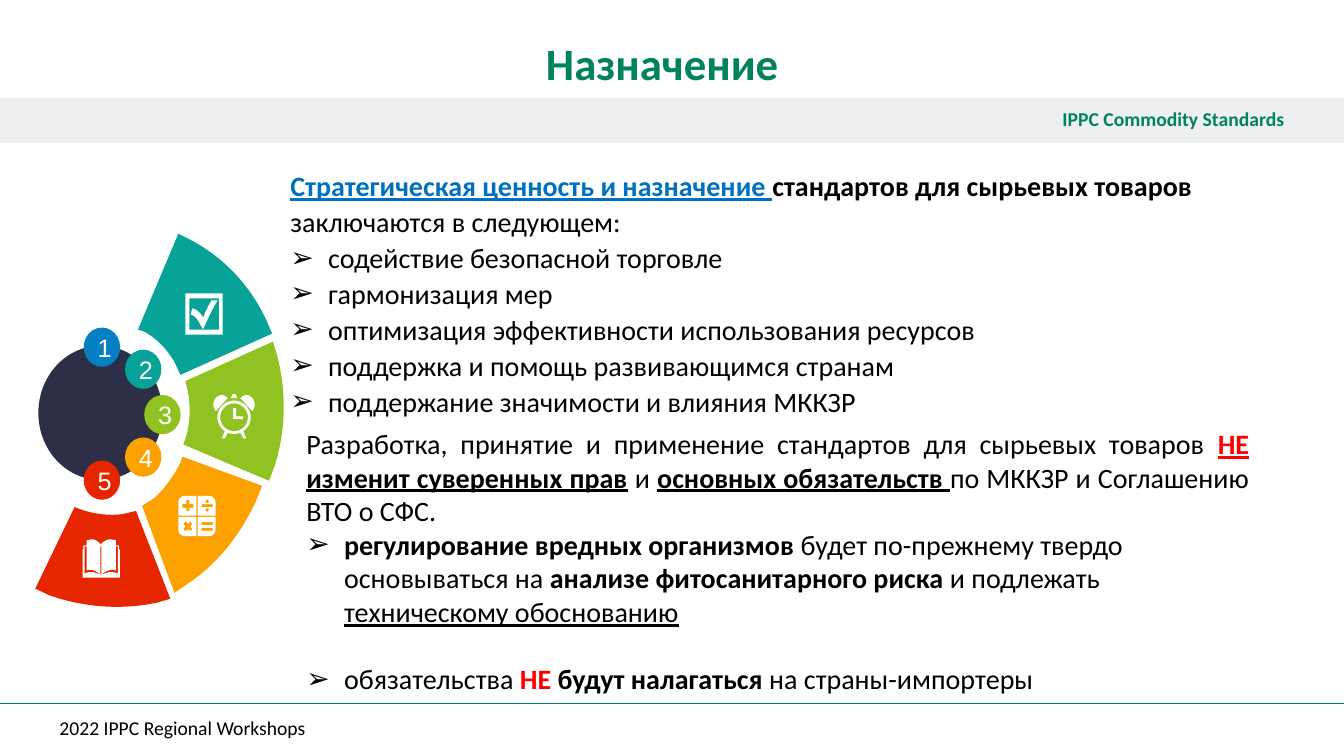
from dataclasses import dataclass

from lxml.etree import SubElement
from pptx import Presentation
from pptx.dml.color import RGBColor
from pptx.enum.shapes import MSO_CONNECTOR, MSO_SHAPE
from pptx.enum.text import MSO_ANCHOR, MSO_AUTO_SIZE, PP_ALIGN
from pptx.oxml.ns import qn
from pptx.util import Pt


@dataclass(frozen=True)
class Theme:
    green: str = "00825F"
    band: str = "D8D9DC"
    black: str = "000000"
    white: str = "FFFFFF"
    red: str = "FF0000"
    link: str = "0070C0"
    navy: str = "2C2F45"
    blue: str = "0680C3"
    teal: str = "07A398"
    lime: str = "90C221"
    orange: str = "FBA200"
    scarlet: str = "E62601"
    font: str = "Calibri"
    badge_font: str = "Arial"
    title: int = 32
    body: int = 20
    badge: int = 18
    small: int = 14


T = Theme()


@dataclass(frozen=True)
class Run:
    text: str
    color: str = T.black
    bold: bool = False
    underline: bool = False
    size: int = T.body
    font: str = T.font


@dataclass(frozen=True)
class Para:
    runs: list[Run]
    bullet: bool = False
    align: PP_ALIGN = PP_ALIGN.LEFT
    spacing: float = 1.0
    before: float = 0


@dataclass(frozen=True)
class Outline:
    """A filled outline: M, L, C and Z commands in points from (x, y)."""
    color: str
    d: str
    x: float = 0
    y: float = 0


@dataclass(frozen=True)
class Badge:
    number: str
    color: str
    x: float
    y: float


def write(sp, paras: list[Para], insets=(7.2, 3.6, 7.2, 3.6), anchor=MSO_ANCHOR.TOP,
          fit=MSO_AUTO_SIZE.NONE) -> None:
    tf = sp.text_frame
    tf.word_wrap, tf.auto_size, tf.vertical_anchor = True, fit, anchor
    tf.margin_left, tf.margin_top, tf.margin_right, tf.margin_bottom = map(Pt, insets)
    for i, para in enumerate(paras):
        p = tf.add_paragraph() if i else tf.paragraphs[0]
        if para.bullet:
            ppr = p._p.get_or_add_pPr()
            ppr.set("marL", str(Pt(27)))
            ppr.set("indent", str(-Pt(27)))
            SubElement(ppr, qn("a:buFont")).set("typeface", T.badge_font)
            SubElement(ppr, qn("a:buChar")).set("char", "➢")
        p.alignment, p.line_spacing = para.align, para.spacing
        if para.before:
            p.space_before = Pt(para.before)
        for run in para.runs:
            r = p.add_run()
            r.text = run.text
            f = r.font
            f.name, f.size, f.bold, f.underline = run.font, Pt(run.size), run.bold, run.underline
            f.color.rgb = RGBColor.from_string(run.color)


def paint(sp, color: str) -> None:
    sp.shadow.inherit = False
    sp.fill.solid()
    sp.fill.fore_color.rgb = RGBColor.from_string(color)
    sp.line.fill.background()


def add_shape(s, kind: MSO_SHAPE, box: tuple, color: str):
    sp = s.shapes.add_shape(kind, *map(Pt, box))
    paint(sp, color)
    return sp


def add_text(s, box: tuple, paras: list[Para], **style) -> None:
    write(s.shapes.add_textbox(*map(Pt, box)), paras, **style)


def rect(x1: float, y1: float, x2: float, y2: float) -> str:
    return f"M {x1} {y1} L {x2} {y1} L {x2} {y2} L {x1} {y2} Z "


def circle(x: float, y: float, r: float) -> str:
    k = 0.55 * r
    return (f"M {x + r} {y} C {x + r} {y + k} {x + k} {y + r} {x} {y + r} "
            f"C {x - k} {y + r} {x - r} {y + k} {x - r} {y} "
            f"C {x - r} {y - k} {x - k} {y - r} {x} {y - r} "
            f"C {x + k} {y - r} {x + r} {y - k} {x + r} {y} Z ")


def contours(d: str, steps: int = 12) -> list[list[tuple[float, float]]]:
    """Turn path commands into point lists, sampling each cubic curve."""
    result, words = [], iter(d.split())
    for word in words:
        if word == "Z":
            continue
        values = [float(next(words)) for _ in range(6 if word == "C" else 2)]
        ends = list(zip(values[::2], values[1::2]))
        if word == "M":
            result.append(ends)
        elif word == "L":
            result[-1] += ends
        else:
            curve = [result[-1][-1], *ends]
            for t in (i / steps for i in range(1, steps + 1)):
                weights = ((1 - t) ** 3, 3 * t * (1 - t) ** 2, 3 * t * t * (1 - t), t ** 3)
                result[-1].append(tuple(sum(w * pt[axis] for w, pt in zip(weights, curve))
                                        for axis in (0, 1)))
    return result


def add_outline(s, o: Outline) -> None:
    fb = None
    for points in contours(o.d):
        first, *rest = [(Pt(o.x + x), Pt(o.y + y)) for x, y in points]
        if fb is None:
            fb = s.shapes.build_freeform(*first, scale=1.0)
        else:
            fb.move_to(*first)
        fb.add_line_segments(rest, close=True)
    paint(fb.convert_to_shape(), o.color)


WEDGES = [
    Outline(T.lime, "M 195 244 L 198 254 C 204.5 278.5 204.5 306 196.5 332 L 192.2 343.4 L 131 317.5 "
            "L 132.5 313.2 C 136 302.4 136 291.6 134.6 281.5 L 132.5 272.2 Z"),
    Outline(T.scarlet, "M 97.2 365 L 121.7 427.7 L 111.6 430.6 C 87.8 435.6 61.2 434.2 36 425.5 "
            "L 25.2 420.5 L 53.3 362.2 L 56.9 363.6 C 67 367.2 77.8 368.6 87.8 367.2 Z"),
    Outline(T.teal, "M 127.4 167 L 137.5 172.1 C 161.3 185 179.3 205.2 190.1 228.2 L 194.4 238.3 "
            "L 128.9 267.8 L 124.6 258.5 C 119.5 249.8 112.3 241.9 103 236.9 L 98.6 235.4 Z"),
    Outline(T.orange, "M 130.3 326.2 L 187.2 347 L 182.9 357.8 C 171.4 383 154.1 403.9 133.2 417.6 "
            "L 124.6 423.4 L 101.5 361.4 L 110.2 355.7 C 117.4 349.2 123.8 340.6 128.9 330.5 Z"),
]
CALCULATOR = (
    "M 0 14.2 L 0 5 C 0 2.2 2.2 0 5 0 L 13 0 L 13 14.2 Z "
    "M 13.8 0 L 22 0 C 24.5 0 26.6 2.2 26.6 5 L 26.6 14.2 L 13.8 14.2 Z "
    "M 0 15 L 13 15 L 13 28.8 L 5 28.8 C 2.2 28.8 0 26.6 0 24 Z "
    "M 13.8 15 L 26.6 15 L 26.6 24 C 26.6 26.6 24.5 28.8 22 28.8 L 13.8 28.8 Z "
    "M 5.8 2.9 L 5.8 5.8 L 2.9 5.8 L 2.9 8.6 L 5.8 8.6 L 5.8 10.8 L 7.9 10.8 L 7.9 8.6 "
    "L 10.8 8.6 L 10.8 5.8 L 7.9 5.8 L 7.9 2.9 Z "
    "M 5 18 L 3.6 20.2 L 5 21.6 L 3.6 23.8 L 5 25.2 L 7.2 23.8 L 8.6 25.2 L 10 23.8 "
    "L 8.6 21.6 L 10 20.2 L 8.6 18 L 7.2 20.2 Z "
    + rect(16.6, 6, 24.5, 8) + circle(20.6, 3.9, 1.2) + circle(20.6, 10.1, 1.2)
    + rect(16.6, 18.7, 24.5, 20.9) + rect(16.6, 22.9, 24.5, 25.1))
CLOCK = (
    circle(14.6, 16.6, 11.9) + circle(14.6, 16.6, 9.9)
    + "M 14 10 L 16 10 L 16 15.9 L 20.9 15.9 L 20.9 18 L 14 18 Z "
    "M 8 26.6 L 10.1 27.7 L 8 31.7 L 5.8 31.7 Z M 21.2 26.6 L 19.1 27.7 L 21.2 31.7 L 23.4 31.7 Z "
    "M 5.8 0.7 C 7.2 0.7 8.6 1.4 10.1 2.9 L 1.5 12.2 C -0.7 9.4 -0.7 5.8 1.5 2.9 C 2.9 1.4 4.4 0.7 5.8 0.7 Z "
    "M 23.4 0.7 C 22 0.7 20.6 1.4 19.1 2.9 L 27.7 12.2 C 29.9 9.4 29.9 5.8 27.7 2.9 C 26.3 1.4 24.8 0.7 23.4 0.7 Z "
    "M 13.7 0 L 15.8 0 L 16.6 2.9 L 12.2 2.9 Z")
BOOK = (
    "M 0 7.2 L 0.7 7.2 L 0.7 4.3 L 2.9 4.3 L 2.9 0.7 C 4.3 0.7 5.8 0 6.5 0 C 9.4 0 10.8 1.4 13 3.6 "
    "C 15.1 1.4 17.3 0 20.2 0 C 20.9 0 22.3 0.7 23.8 0.7 L 23.8 4.3 L 25.9 4.3 L 25.9 7.2 "
    "L 26.6 7.2 L 26.6 27.4 L 0 27.4 Z "
    "M 12.8 25.2 C 9.4 22.3 5.8 20.9 2.9 22.3 L 2.9 5 L 1.5 5 L 1.5 24.5 C 6.5 22.3 8.6 23.8 12.8 25.2 Z "
    "M 13.4 25.2 C 17.3 22.3 20.9 20.9 23.8 22.3 L 23.8 5 L 25.2 5 L 25.2 24.5 C 20.2 22.3 18 23.8 13.4 25.2 Z "
    + rect(12.8, 5, 13.4, 25.2))
CHECKBOX = (
    rect(0, 0, 26.6, 29.5) + rect(2.9, 3.6, 24, 25.9)
    + "M 3.6 15.1 L 5 10.8 C 9.4 12.2 10.1 13.7 12.9 17.3 C 14.4 12.2 15.8 10.1 18.7 5 L 23 5 "
    "C 19.4 10.8 15.8 18.7 12.9 25.2 L 12.2 25.2 C 10.1 21.6 7.9 15.8 3.6 15.1 Z")
ICONS = [Outline(T.white, CALCULATOR, 127.4, 354.2), Outline(T.white, CLOCK, 152.6, 281.5),
         Outline(T.white, BOOK, 59, 385.2), Outline(T.white, CHECKBOX, 132.5, 209.5)]
BADGES = [Badge("1", T.blue, 59.8, 234), Badge("2", T.teal, 89.3, 249.8), Badge("3", T.lime, 103, 282.2),
          Badge("4", T.orange, 89.3, 312.5), Badge("5", T.scarlet, 59.8, 329)]
GOALS = ["содействие безопасной торговле", "гармонизация мер", "оптимизация эффективности использования ресурсов",
         "поддержка и помощь развивающимся странам", "поддержание значимости и влияния МККЗР"]
PURPOSE = [Para([Run("Стратегическая ценность и назначение ", T.link, True, True),
                 Run("стандартов для сырьевых товаров ", bold=True),
                 Run("заключаются в следующем:")], spacing=1.07),
           *(Para([Run(goal)], bullet=True, spacing=1.07) for goal in GOALS)]
LIMITS = [
    Para([Run("Разработка, принятие и применение стандартов для сырьевых товаров "),
          Run("НЕ ", T.red, True, True), Run("изменит суверенных прав", bold=True, underline=True),
          Run(" и "), Run("основных обязательств ", bold=True, underline=True),
          Run("по МККЗР и Соглашению ВТО о СФС.")], align=PP_ALIGN.JUSTIFY),
    Para([Run("регулирование вредных организмов ", bold=True),
          Run("будет по-прежнему твердо основываться на "),
          Run("анализе фитосанитарного риска ", bold=True), Run("и подлежать "),
          Run("техническому обоснованию", underline=True)], bullet=True),
    Para([Run("обязательства "), Run("НЕ ", T.red, True), Run("будут налагаться ", bold=True),
          Run("на страны-импортеры")], bullet=True, before=24),
]


def main() -> None:
    prs = Presentation()
    prs.slide_width, prs.slide_height = Pt(960), Pt(540)
    s = prs.slides.add_slide(prs.slide_layouts[5])
    title = s.shapes.title
    title.left, title.top, title.width, title.height = map(Pt, (-11.5, 30.2, 954.7, 23))
    write(title, [Para([Run("Назначение", T.green, True, size=T.title)], align=PP_ALIGN.CENTER, spacing=0.9)],
          insets=(42.5, 0, 28, 3.6))

    rule = s.shapes.add_connector(MSO_CONNECTOR.STRAIGHT, 0, Pt(502.6), Pt(960), Pt(502.6))
    rule.line.color.rgb, rule.line.width = RGBColor.from_string(T.green), Pt(1)
    SubElement(rule._element.spPr, qn("a:effectLst"))
    strip = {"insets": (42.5, 3.6, 42.5, 3.6), "anchor": MSO_ANCHOR.MIDDLE}
    add_text(s, (0, 508.3, 960, 25.2),
             [Para([Run("2022 IPPC Regional Workshops", size=T.small)], spacing=0.9)], **strip)
    band = add_shape(s, MSO_SHAPE.RECTANGLE, (0, 69.8, 960, 32.4), T.band)
    SubElement(band._element.spPr.find(".//" + qn("a:srgbClr")), qn("a:alpha")).set("val", "42000")
    write(band, [Para([Run("IPPC Commodity Standards", T.green, True, size=T.small)],
                      align=PP_ALIGN.RIGHT, spacing=0.9)], **strip)

    add_text(s, (164.9, 118.8, 749.5, 209.5), PURPOSE, insets=(42.5, 0, 28, 3.6),
             fit=MSO_AUTO_SIZE.SHAPE_TO_FIT_TEXT)
    for wedge in WEDGES:
        add_outline(s, wedge)
    add_shape(s, MSO_SHAPE.OVAL, (27.4, 247, 88.6, 95.8), T.navy)
    for b in BADGES:
        write(add_shape(s, MSO_SHAPE.OVAL, (b.x, b.y, 26, 28), b.color),
              [Para([Run(b.number, T.white, size=T.badge, font=T.badge_font)], align=PP_ALIGN.CENTER)],
              insets=(4, 0, 0, 0), anchor=MSO_ANCHOR.MIDDLE)
    for icon in ICONS:
        add_outline(s, icon)
    add_text(s, (211.7, 301, 687.6, 200.9), LIMITS, fit=MSO_AUTO_SIZE.SHAPE_TO_FIT_TEXT)
    prs.save("out.pptx")


if __name__ == "__main__":
    main()
